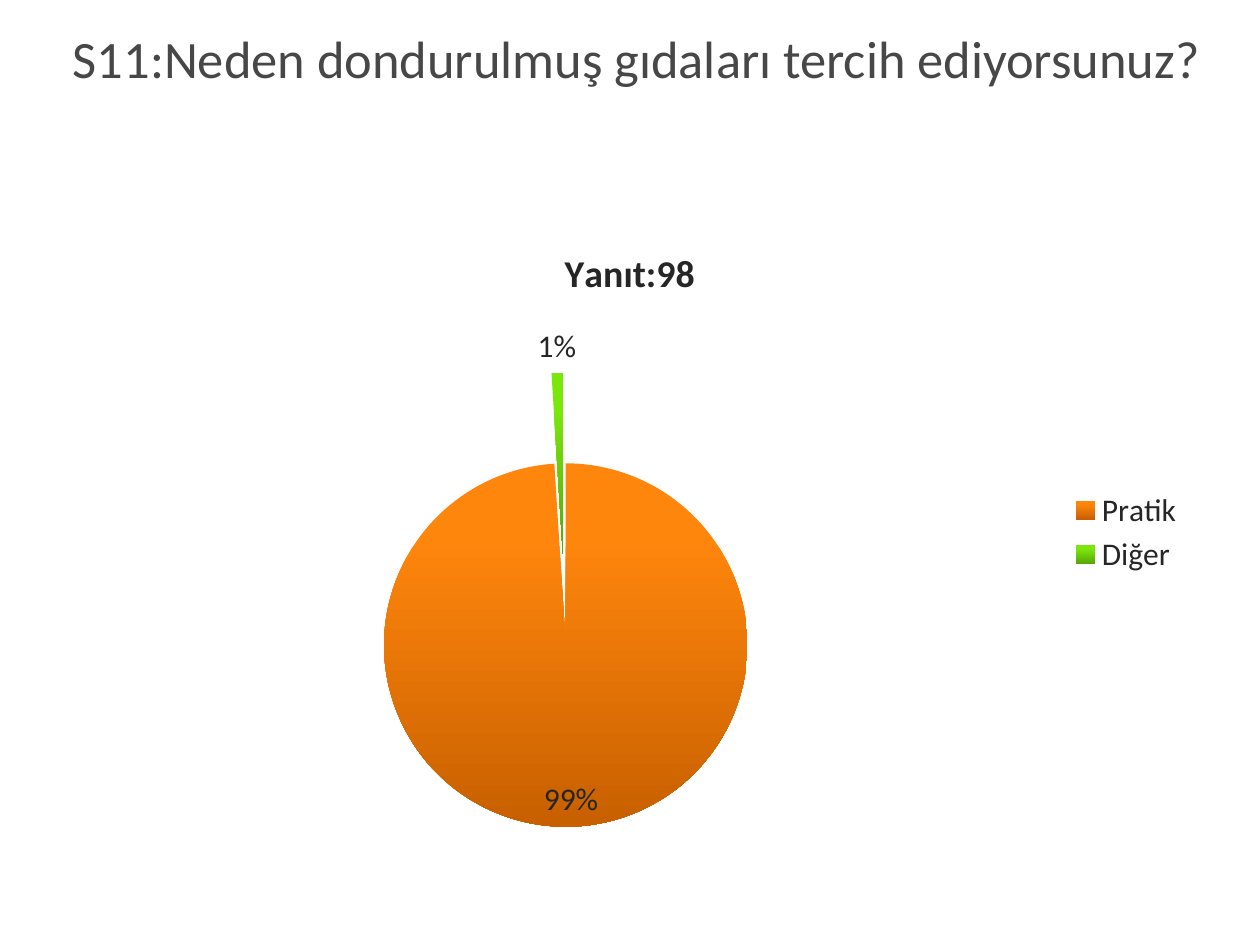
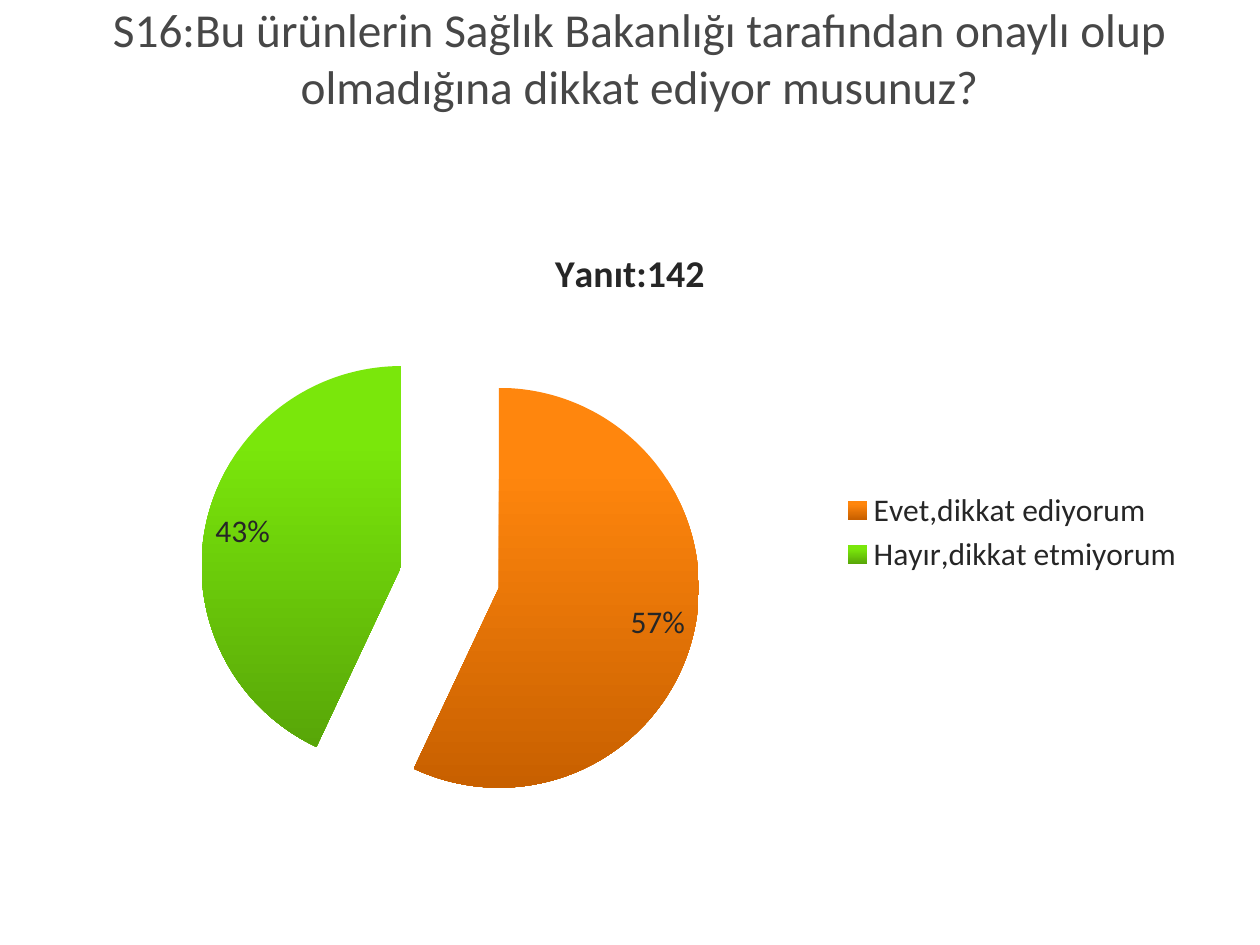
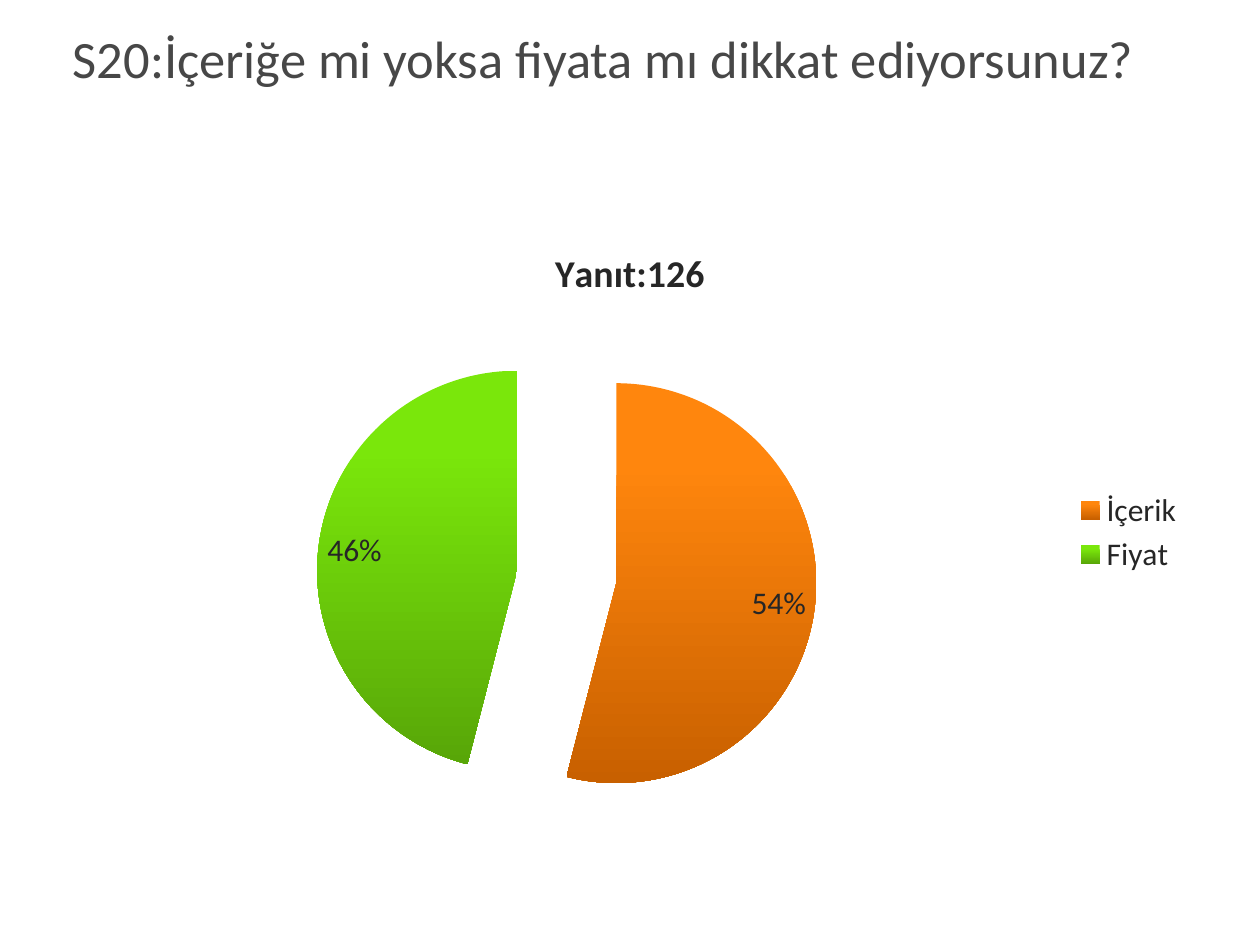
"""Build three survey slides, each a question over a pie chart of its answers."""
from dataclasses import dataclass

from lxml import etree
from pptx import Presentation
from pptx.chart.data import CategoryChartData
from pptx.dml.color import RGBColor
from pptx.enum.chart import XL_CHART_TYPE, XL_LABEL_POSITION, XL_LEGEND_POSITION
from pptx.enum.text import MSO_ANCHOR, PP_ALIGN
from pptx.oxml.ns import qn
from pptx.util import Inches, Pt

PIE = XL_CHART_TYPE.PIE
BEST_FIT = XL_LABEL_POSITION.BEST_FIT
LEGEND_RIGHT = XL_LEGEND_POSITION.RIGHT
MIDDLE = MSO_ANCHOR.MIDDLE
LEFT = PP_ALIGN.LEFT
CENTER = PP_ALIGN.CENTER


@dataclass(frozen=True)
class Theme:
    font: str = "Calibri"
    question_color: RGBColor = RGBColor(0x47, 0x47, 0x47)
    chart_color: RGBColor = RGBColor(0x26, 0x26, 0x26)
    slice_shades: tuple = (("FF860D", "C86000"), ("7AE70B", "58A608"))
    question_size: float = 30
    long_question_size: float = 27
    chart_size: float = 18
    chart_title_size: float = 21.6
    explosion: int = 25


THEME = Theme()

SURVEY = [
    ("S11:Neden dondurulmuş gıdaları tercih ediyorsunuz?",
     THEME.question_size, LEFT, "Yanıt:98",
     {"Pratik": 99, "Diğer": 1}),
    ("S16:Bu ürünlerin Sağlık Bakanlığı tarafından onaylı olup "
     "olmadığına dikkat ediyor musunuz?",
     THEME.long_question_size, CENTER, "Yanıt:142",
     {"Evet,dikkat ediyorum": 57, "Hayır,dikkat etmiyorum": 43}),
    ("S20:İçeriğe mi yoksa fiyata mı dikkat ediyorsunuz?",
     THEME.question_size, LEFT, "Yanıt:126",
     {"İçerik": 54, "Fiyat": 46}),
]


def add_run(paragraph, text, size, color, bold=False):
    run = paragraph.add_run()
    run.text = text
    run.font.name = THEME.font
    run.font.size = Pt(size)
    run.font.bold = bold
    run.font.color.rgb = color


prs = Presentation()
prs.slide_width = Inches(10)
prs.slide_height = Inches(7.5)
blank = prs.slide_layouts[6]

for question, size, alignment, response_count, answers in SURVEY:
    slide = prs.slides.add_slide(blank)

    heading = slide.shapes.add_textbox(
        Inches(0.48), Inches(0.08), Inches(9.19), Inches(0.75)).text_frame
    heading.word_wrap = True
    heading.vertical_anchor = MIDDLE
    heading.paragraphs[0].alignment = alignment
    add_run(heading.paragraphs[0], question, size, THEME.question_color)

    answer_data = CategoryChartData()
    answer_data.categories = list(answers)
    answer_data.add_series("Series 1", list(answers.values()))
    chart = slide.shapes.add_chart(
        PIE, Inches(0.5), Inches(1.75), Inches(9), Inches(4.95), answer_data).chart
    chart.font.name = THEME.font
    chart.font.size = Pt(THEME.chart_size)
    chart.font.color.rgb = THEME.chart_color

    chart.has_title = True
    add_run(chart.chart_title.text_frame.paragraphs[0], response_count,
            THEME.chart_title_size, THEME.chart_color, bold=True)
    chart.chart_title.include_in_layout = False
    chart.has_legend = True
    chart.legend.position = LEGEND_RIGHT
    chart.legend.include_in_layout = False

    pie = chart.plots[0]
    pie.vary_by_categories = True
    pie.has_data_labels = True
    shares = pie.data_labels
    shares.show_percentage = True
    shares.show_value = False
    shares.number_format = "0%"
    shares.number_format_is_linked = False
    shares.position = BEST_FIT

    series = pie.series[0]
    for index, shades in enumerate(THEME.slice_shades):
        slice_format = series.points[index].format
        slice_format.line.fill.background()
        slice_format.fill.gradient()
        slice_format.fill.gradient_angle = 270
        for stop, shade, position in zip(
                slice_format.fill.gradient_stops, shades, (0.2, 1)):
            stop.color.rgb = RGBColor.from_string(shade)
            stop.position = position

    explosion = etree.Element(qn("c:explosion"), val=str(THEME.explosion))
    series._element.find(qn("c:dPt")).addprevious(explosion)

prs.save("out.pptx")
